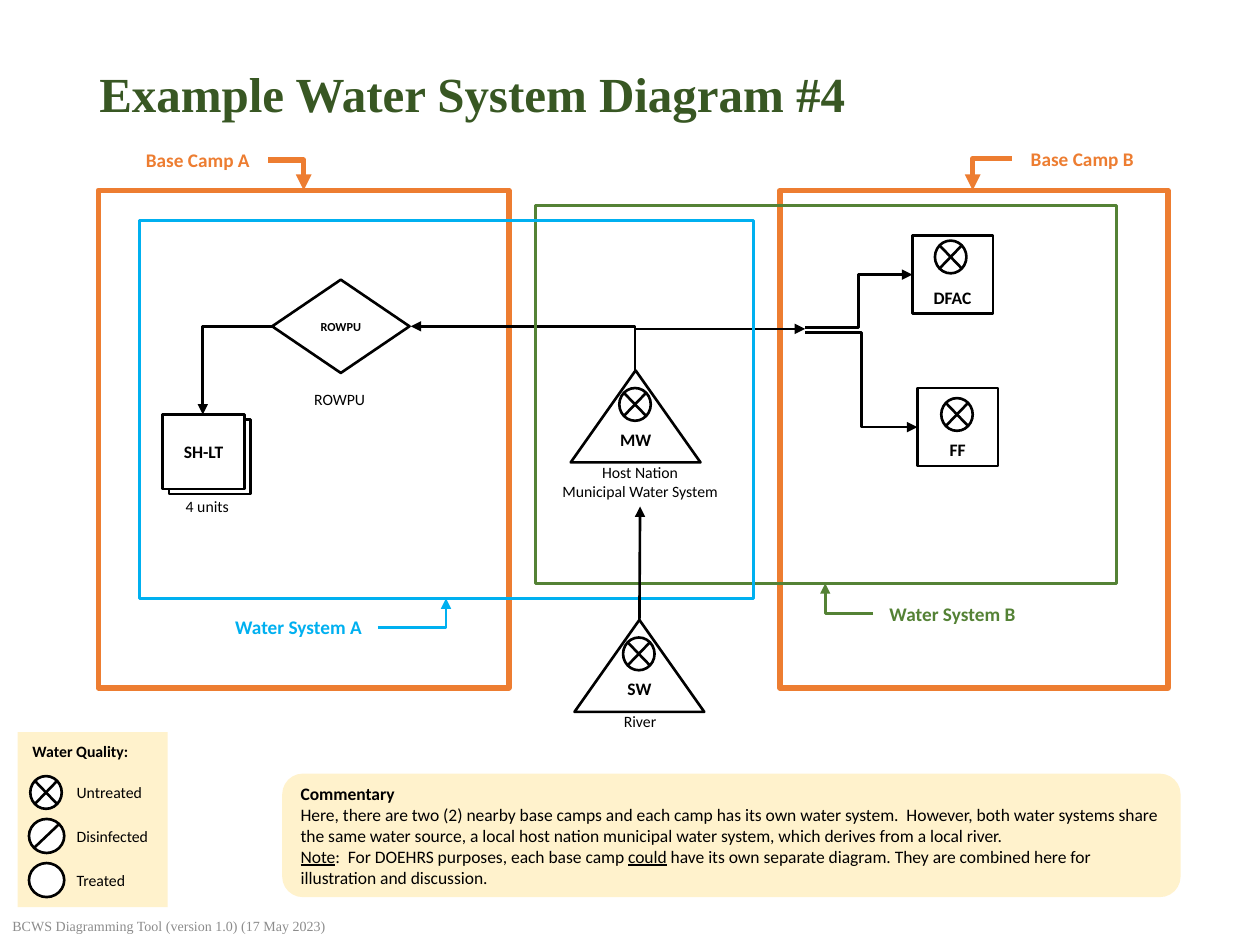
from dataclasses import dataclass

from lxml.etree import SubElement
from pptx import Presentation
from pptx.dml.color import RGBColor
from pptx.enum.shapes import MSO_CONNECTOR, MSO_SHAPE
from pptx.enum.text import MSO_ANCHOR, PP_ALIGN
from pptx.oxml.ns import qn
from pptx.util import Inches, Pt


@dataclass(frozen=True)
class Theme:
    sans: str = "Calibri"
    serif: str = "Times New Roman"
    black: str = "000000"
    white: str = "FFFFFF"
    cream: str = "FFF2CC"
    heading: str = "385723"
    footer: str = "8C8C8C"
    camp: str = "ED7D31"
    system_a: str = "00B0F0"
    system_b: str = "548235"
    title_size: float = 28
    tag_size: float = 11
    body_size: float = 10
    caption_size: float = 9
    small_size: float = 8
    tiny_size: float = 7
    thin: float = 1.5
    thick: float = 3


THEME = Theme()


def write(para, text, size=THEME.body_size, color=THEME.black, font=THEME.sans,
          bold=False, underline=False, align=PP_ALIGN.LEFT):
    para.alignment = align
    span = para.add_run()
    span.text = text
    span.font.name = font
    span.font.size = Pt(size)
    span.font.bold = bold
    span.font.underline = underline
    span.font.color.rgb = RGBColor.from_string(color)


def add_text(page, place, lines, wrap=True, anchor=MSO_ANCHOR.MIDDLE, **style):
    box = page.shapes.add_textbox(*map(Inches, place))
    frame = box.text_frame
    frame.word_wrap = wrap
    frame.vertical_anchor = anchor
    for index, line in enumerate(lines):
        para = frame.add_paragraph() if index else frame.paragraphs[0]
        write(para, line, **style)
    return box


def add_caption(page, place, *lines):
    return add_text(page, place, lines, wrap=False, size=THEME.caption_size,
                    align=PP_ALIGN.CENTER)


def add_tag(page, left, top, width, text, color):
    add_text(page, (left, top, width, 0.29), [text], anchor=MSO_ANCHOR.TOP,
             size=THEME.tag_size, color=color, bold=True, align=PP_ALIGN.CENTER)


def add_shape(page, kind, place, fill=THEME.white, line=THEME.black, weight=THEME.thin):
    shape = page.shapes.add_shape(kind, *map(Inches, place))
    shape.shadow.inherit = False
    if fill:
        shape.fill.solid()
        shape.fill.fore_color.rgb = RGBColor.from_string(fill)
    else:
        shape.fill.background()
    if line:
        shape.line.color.rgb = RGBColor.from_string(line)
        shape.line.width = Pt(weight)
    else:
        shape.line.fill.background()
    return shape


def add_node(page, kind, place, label, size=THEME.body_size, anchor=MSO_ANCHOR.MIDDLE):
    node = add_shape(page, kind, place)
    frame = node.text_frame
    frame.word_wrap = True
    frame.vertical_anchor = anchor
    frame.margin_left = frame.margin_right = 0
    write(frame.paragraphs[0], label, size=size, bold=True, align=PP_ALIGN.CENTER)
    return node


def add_boundary(page, place, color, weight=THEME.thin):
    add_shape(page, MSO_SHAPE.RECTANGLE, place, None, color, weight)


def add_untreated(page, left, top):
    add_shape(page, MSO_SHAPE.FLOWCHART_SUMMING_JUNCTION, (left, top, 0.25, 0.26))


def add_source(page, left, top, label):
    source = add_node(page, MSO_SHAPE.ISOSCELES_TRIANGLE, (left, top, 1.03, 0.73), label)
    add_untreated(page, left + 0.385, top + 0.14)
    return source


def add_building(page, left, top, label, symbol):
    add_node(page, MSO_SHAPE.RECTANGLE, (left, top, 0.64, 0.62), label,
             anchor=MSO_ANCHOR.BOTTOM)
    add_untreated(page, *symbol)


def add_line(page, start, end, kind=MSO_CONNECTOR.STRAIGHT, color=THEME.black,
             weight=THEME.thin, arrow=True):
    connector = page.shapes.add_connector(kind, *map(Inches, start + end))
    connector.line.color.rgb = RGBColor.from_string(color)
    connector.line.width = Pt(weight)
    properties = connector._element.spPr
    if arrow:
        SubElement(properties.find(qn("a:ln")), qn("a:tailEnd"), type="triangle")
    SubElement(properties, qn("a:effectLst"))
    return connector


def add_corner(page, start, end, **style):
    connector = add_line(page, start, end, MSO_CONNECTOR.ELBOW, **style)
    connector._element.spPr.find(qn("a:prstGeom")).set("prst", "bentConnector2")
    return connector


def add_rising_corner(page, start, end):
    (x1, y1), (x2, y2) = start, end
    center_x, center_y = (x1 + x2) / 2, (y1 + y2) / 2
    half_run, half_rise = (x2 - x1) / 2, (y1 - y2) / 2
    connector = add_corner(page, (center_x - half_rise, center_y - half_run),
                           (center_x + half_rise, center_y + half_run))
    connector._element.spPr.find(qn("a:xfrm")).set("rot", str(270 * 60000))


def add_commentary(page):
    box = add_shape(page, MSO_SHAPE.ROUNDED_RECTANGLE, (2.24, 6.14, 7.13, 0.98),
                    THEME.cream, None)
    frame = box.text_frame
    frame.word_wrap = True
    frame.vertical_anchor = MSO_ANCHOR.MIDDLE
    write(frame.paragraphs[0], "Commentary", bold=True)
    write(frame.add_paragraph(),
          "Here, there are two (2) nearby base camps and each camp has its own water "
          "system.  However, both water systems share the same water source, a local "
          "host nation municipal water system, which derives from a local river.")
    note = frame.add_paragraph()
    write(note, "Note", underline=True)
    write(note, ":  For DOEHRS purposes, each base camp ")
    write(note, "could", underline=True)
    write(note, " have its own separate diagram. They are combined here for "
                "illustration and discussion.")


def add_legend(page):
    add_shape(page, MSO_SHAPE.RECTANGLE, (0.14, 5.81, 1.19, 1.39), THEME.cream, None)
    add_text(page, (0.16, 5.84, 1.17, 0.25), ["Water Quality:"],
             size=THEME.caption_size, bold=True)
    for row, label in enumerate(("Untreated", "Disinfected", "Treated")):
        top = 6.16 + 0.35 * row
        add_text(page, (0.51, top, 0.8, 0.25), [label], size=THEME.caption_size)
        if label == "Untreated":
            add_untreated(page, 0.24, top)
        else:
            add_shape(page, MSO_SHAPE.FLOWCHART_CONNECTOR, (0.23, top - 0.01, 0.28, 0.27))
        if label == "Disinfected":
            add_line(page, (0.27, 6.73), (0.47, 6.54), arrow=False)


def main():
    deck = Presentation()
    deck.slide_width, deck.slide_height = Inches(10), Inches(7.5)
    page = deck.slides.add_slide(deck.slide_layouts[6])

    title = add_text(page, (0.69, 0.4, 8.62, 0.74), ["Example Water System Diagram #4"],
                     size=THEME.title_size, color=THEME.heading, font=THEME.serif, bold=True)
    title.text_frame.paragraphs[0].line_spacing = 0.9
    add_text(page, (0, 7.2, 6, 0.29), ["BCWS Diagramming Tool (version 1.0) (17 May 2023)"],
             size=THEME.small_size, color=THEME.footer, font=THEME.serif)
    add_commentary(page)

    add_node(page, MSO_SHAPE.DIAMOND, (2.16, 2.22, 1.09, 0.74), "ROWPU", THEME.tiny_size)
    add_caption(page, (2.39, 3.04, 0.61, 0.25), "ROWPU")
    add_boundary(page, (6.19, 1.51, 3.08, 3.95), THEME.camp, THEME.thick)
    add_shape(page, MSO_SHAPE.RECTANGLE, (1.34, 3.33, 0.65, 0.59))
    add_node(page, MSO_SHAPE.RECTANGLE, (1.29, 3.29, 0.65, 0.59), "SH-LT")
    add_caption(page, (1.37, 3.89, 0.55, 0.25), "4 units")
    add_boundary(page, (0.78, 1.51, 3.26, 3.95), THEME.camp, THEME.thick)

    add_source(page, 4.53, 2.94, "MW")
    municipal = add_caption(page, (4.35, 3.62, 1.46, 0.4),
                            "Host Nation", "Municipal Water System")
    add_rising_corner(page, (5.04, 2.94), (6.39, 2.61))
    add_rising_corner(page, (5.04, 2.94), (3.26, 2.59))
    add_boundary(page, (4.25, 1.63, 4.61, 3), THEME.system_b)
    add_boundary(page, (1.11, 1.75, 4.87, 3), THEME.system_a)
    add_line(page, (6.39, 2.6), (7.24, 2.18), MSO_CONNECTOR.ELBOW)
    add_line(page, (6.39, 2.64), (7.28, 3.39), MSO_CONNECTOR.ELBOW)
    add_corner(page, (2.16, 2.59), (1.61, 3.29))

    river = add_source(page, 4.56, 4.92, "SW")
    add_caption(page, (4.85, 5.6, 0.46, 0.25), "River")
    intake = add_line(page, (5.08, 4.92), (5.08, 4.02))
    intake.begin_connect(river, 0)
    intake.end_connect(municipal, 2)

    add_tag(page, 8.03, 1.12, 1.12, "Base Camp B", THEME.camp)
    add_corner(page, (8.03, 1.26), (7.72, 1.51), color=THEME.camp, weight=THEME.thick)
    add_tag(page, 1.01, 1.13, 1.12, "Base Camp A", THEME.camp)
    add_corner(page, (2.13, 1.27), (2.41, 1.51), color=THEME.camp, weight=THEME.thick)
    add_tag(page, 1.74, 4.83, 1.26, "Water System A", THEME.system_a)
    add_corner(page, (3, 4.98), (3.54, 4.75), color=THEME.system_a)
    add_tag(page, 6.93, 4.73, 1.26, "Water System B", THEME.system_b)
    add_corner(page, (6.93, 4.87), (6.55, 4.63), color=THEME.system_b)

    add_building(page, 7.24, 1.87, "DFAC", (7.42, 1.91))
    add_building(page, 7.28, 3.08, "FF", (7.47, 3.16))
    add_legend(page)
    deck.save("out.pptx")


if __name__ == "__main__":
    main()
